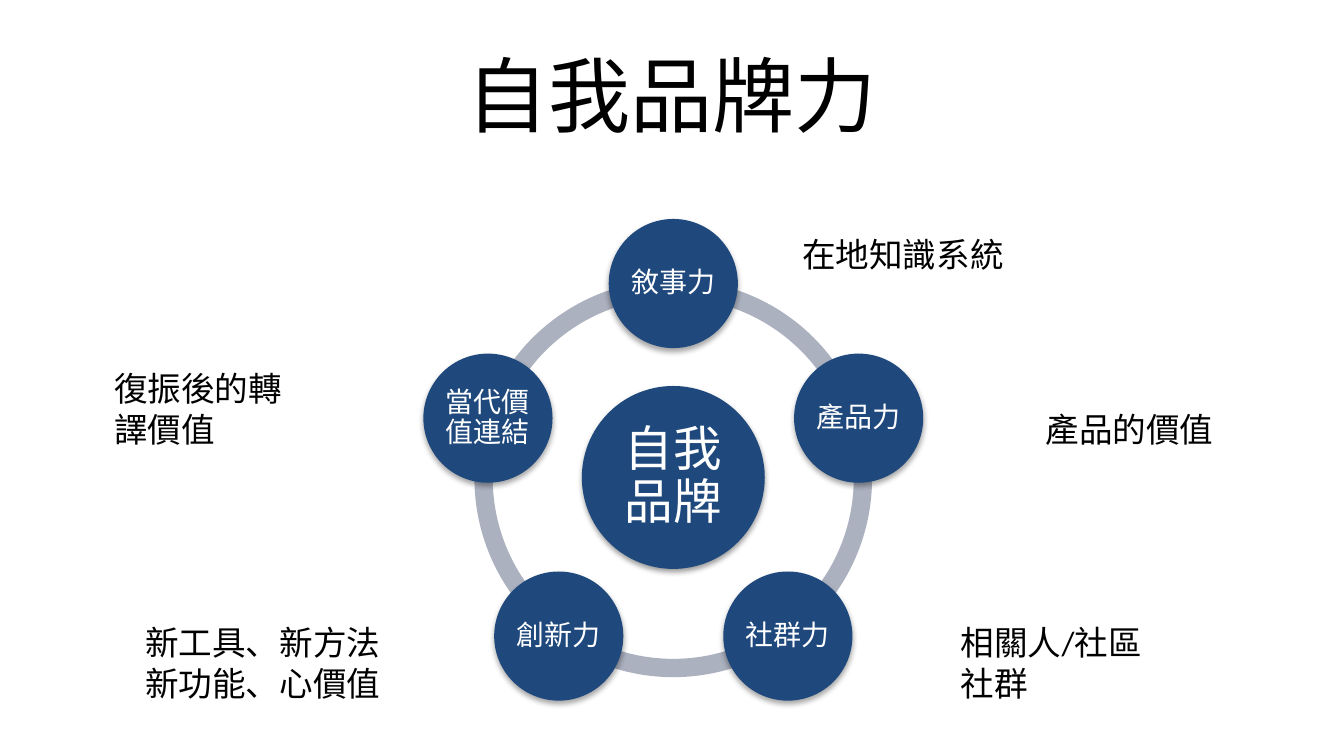
import math
from lxml import etree
from pptx import Presentation
from pptx.dml.color import RGBColor
from pptx.enum.shapes import MSO_SHAPE
from pptx.enum.text import MSO_ANCHOR, MSO_AUTO_SIZE, PP_ALIGN
from pptx.oxml.ns import qn
from pptx.util import Pt

ARC, OVAL = MSO_SHAPE.BLOCK_ARC, MSO_SHAPE.OVAL
MIDDLE, TOP = MSO_ANCHOR.MIDDLE, MSO_ANCHOR.TOP
CENTER, LEFT = PP_ALIGN.CENTER, PP_ALIGN.LEFT
GROW = MSO_AUTO_SIZE.SHAPE_TO_FIT_TEXT
BLACK = RGBColor(0x00, 0x00, 0x00)
WHITE = RGBColor(0xFF, 0xFF, 0xFF)
NAVY = RGBColor(0x1F, 0x49, 0x7D)
GRAY = RGBColor(0xAC, 0xB1, 0xBF)

CX, CY = 360.7, 256.3
RING, ORBIT = 213, 104.4
NODES = ["敘事力", "產品力", "社群力", "創新力", "當代價值連結"]
STEP = 360 / len(NODES)
LABELS = [
    (553, 215.3, 130.3, 28.8, ["產品的價值"]),
    (507.6, 329.8, 136.1, 51.1, ["相關人/社區", "社群"]),
    (422.6, 121.7, 130.3, 28.8, ["在地知識系統"]),
    (54, 193.7, 118.8, 51.1, ["復振後的轉譯價值"]),
    (70.6, 329.8, 147.6, 51.1, ["新工具、新方法", "新功能、心價值"]),
]


def write(sp, lines, size, color, align, spacing, frame):
    tf = sp.text_frame
    for name, value in {"word_wrap": True, **frame}.items():
        setattr(tf, name, value)
    tf.text = "\n".join(lines)
    for p in tf.paragraphs:
        p.alignment = align
        p.line_spacing = spacing
        r = p.runs[0]
        for name, value in {"name": "Calibri", "size": Pt(size)}.items():
            setattr(r.font, name, value)
        r.font.color.rgb = color


def add_flat(kind, x, y, size, color):
    sp = s.shapes.add_shape(kind, Pt(x - size / 2), Pt(y - size / 2), Pt(size), Pt(size))
    sp.shadow.inherit = False
    sp.fill.solid()
    sp.fill.fore_color.rgb = color
    sp.line.fill.background()
    return sp


prs = Presentation()
prs.slide_width, prs.slide_height = Pt(720), Pt(405)
s = prs.slides.add_slide(prs.slide_layouts[6])

title = s.shapes.add_textbox(Pt(36), Pt(16.6), Pt(648), Pt(67.7))
write(title, ["自我品牌力"], 44, BLACK, CENTER, 1.0, {"vertical_anchor": MIDDLE})

for i in range(len(NODES)):
    start = (270 + i * STEP) % 360
    arc = add_flat(ARC, CX, CY, RING, GRAY)
    for n, value in enumerate([start * 0.6, (start + STEP) % 360 * 0.6, 0.046]):
        arc.adjustments[n] = value

circles = [(CX, CY - 0.5, 98, "自我品牌", 26, 2.9, 38, 1.6)]
for i, text in enumerate(NODES):
    angle = math.radians(i * STEP - 90)
    x, y = CX + ORBIT * math.cos(angle), CY + ORBIT * math.sin(angle)
    circles.append((x, y, 69.2, text, 15, 1.4, 35, 1.8))

for x, y, size, text, font_size, inset, alpha, dist in circles:
    circle = add_flat(OVAL, x, y, size, NAVY)
    effects = circle._element.spPr.find(qn("a:effectLst"))
    shadow = etree.SubElement(
        effects, qn("a:outerShdw"), blurRad=str(Pt(3.1)), dist=str(Pt(dist)),
        dir="5400000", rotWithShape="0")
    tint = etree.SubElement(shadow, qn("a:srgbClr"), val=str(BLACK))
    etree.SubElement(tint, qn("a:alpha"), val=str(alpha * 1000))
    frame = {f"margin_{side}": Pt(inset) for side in ("left", "top", "right", "bottom")}
    write(circle, [text], font_size, WHITE, CENTER, 0.9, {"vertical_anchor": MIDDLE, **frame})

for x, y, w, h, lines in LABELS:
    label = s.shapes.add_textbox(Pt(x), Pt(y), Pt(w), Pt(h))
    write(label, lines, 18, BLACK, LEFT, 1.0, {"vertical_anchor": TOP, "auto_size": GROW})

prs.save("out.pptx")
